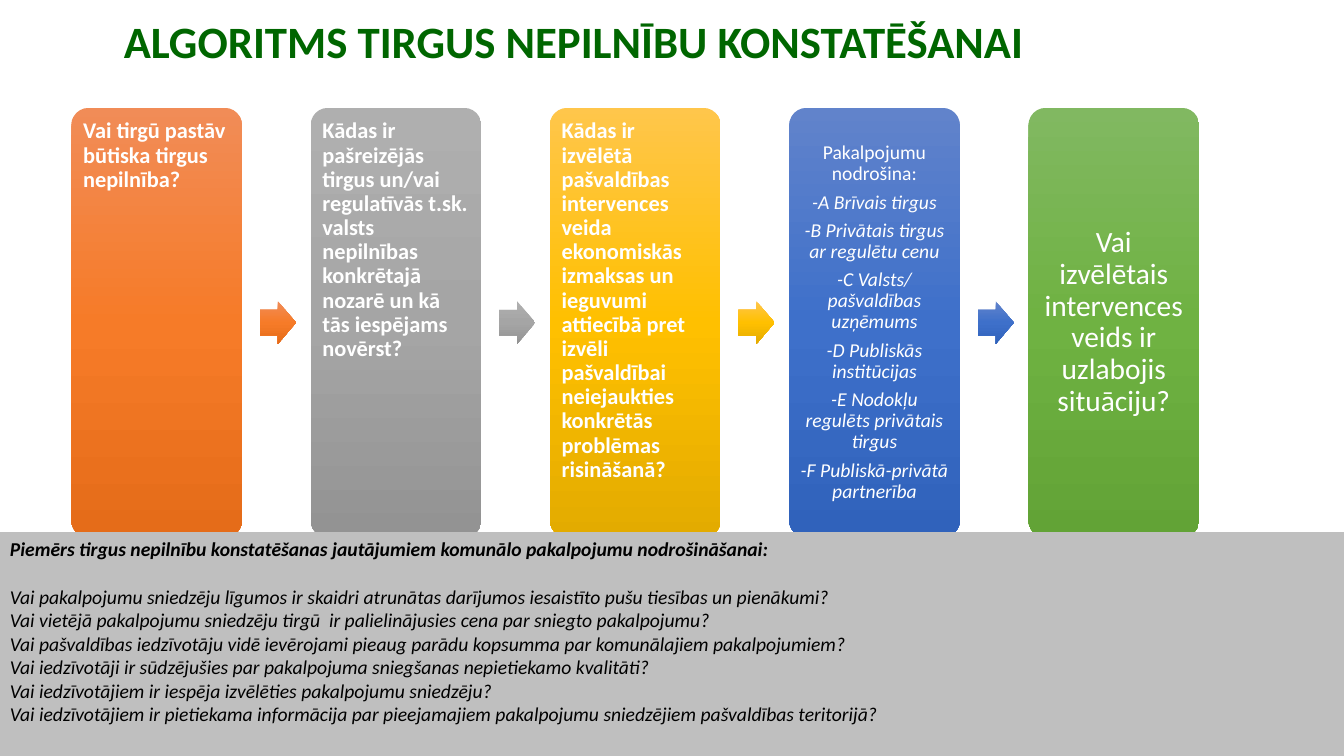
from copy import deepcopy
from dataclasses import dataclass

from pptx import Presentation
from pptx.dml.color import RGBColor as Rgb
from pptx.enum.shapes import MSO_SHAPE as Kind
from pptx.enum.text import MSO_ANCHOR as Anchor, PP_ALIGN as Align
from pptx.oxml.ns import qn
from pptx.shapes.autoshape import Shape
from pptx.shapes.shapetree import SlideShapes
from pptx.text.text import TextFrame
from pptx.util import Cm, Pt


@dataclass(frozen=True)
class Theme:
    font: str = "Calibri"
    title: str = "006600"
    white: str = "FFFFFF"
    black: str = "000000"
    panel: str = "BFBFBF"
    orange: tuple[str, ...] = ("F18C57", "F67B28", "E56C19")
    gray: tuple[str, ...] = ("AFAFAF", "A5A5A5", "939393")
    gold: tuple[str, ...] = ("FFC64B", "FFC000", "E3AB00")
    blue: tuple[str, ...] = ("6183CB", "3E70CA", "3062BB")
    green: tuple[str, ...] = ("81B861", "6FB242", "62A336")
    head: int = 32
    final: int = 21
    ask: int = 16
    small: int = 14


@dataclass(frozen=True)
class Step:
    lines: tuple[str, ...]
    shades: tuple[str, ...]
    size: int
    inset: float
    bold: bool = False
    center: bool = False


THEME = Theme()
WIDTH, HEIGHT = 33.87, 19.05
LEFT, TOP, PITCH = 1.8, 2.72, 6.03
CARD_W, CARD_H = 4.3, 10.82
ARROW_W, ARROW_H, ARROW_DX = 0.91, 1.07, 4.75
PANEL_TOP = 13.41

STEPS = (
    Step(("Vai tirgū pastāv būtiska tirgus nepilnība?",),
         THEME.orange, THEME.ask, 0.17, bold=True),
    Step(("Kādas ir pašreizējās tirgus un/vai regulatīvās t.sk. valsts "
          "nepilnības konkrētajā nozarē un kā tās iespējams novērst?",),
         THEME.gray, THEME.ask, 0.17, bold=True),
    Step(("Kādas ir izvēlētā pašvaldības intervences veida ekonomiskās "
          "izmaksas un ieguvumi attiecībā pret izvēli pašvaldībai "
          "neiejaukties konkrētās problēmas risināšanā?",),
         THEME.gold, THEME.ask, 0.17, bold=True),
    Step(("Pakalpojumu nodrošina:",
          "-A Brīvais tirgus",
          "-B Privātais tirgus ar regulētu cenu",
          "-C Valsts/ pašvaldības uzņēmums",
          "-D Publiskās institūcijas",
          "-E Nodokļu regulēts privātais tirgus",
          "-F Publiskā-privātā partnerība"),
         THEME.blue, THEME.small, 0.15, center=True),
    Step(("Vai izvēlētais intervences veids ir uzlabojis situāciju?",),
         THEME.green, THEME.final, 0.23, center=True),
)

PANEL = (
    "Piemērs tirgus nepilnību konstatēšanas jautājumiem komunālo pakalpojumu nodrošināšanai:",
    "Vai pakalpojumu sniedzēju līgumos ir skaidri atrunātas darījumos iesaistīto pušu tiesības un pienākumi?",
    "Vai vietējā pakalpojumu sniedzēju tirgū  ir palielinājusies cena par sniegto pakalpojumu?",
    "Vai pašvaldības iedzīvotāju vidē ievērojami pieaug parādu kopsumma par komunālajiem pakalpojumiem?",
    "Vai iedzīvotāji ir sūdzējušies par pakalpojuma sniegšanas nepietiekamo kvalitāti?",
    "Vai iedzīvotājiem ir iespēja izvēlēties pakalpojumu sniedzēju?",
    "Vai iedzīvotājiem ir pietiekama informācija par pieejamajiem pakalpojumu sniedzējiem pašvaldības teritorijā?",
)


def write(frame: TextFrame, lines: tuple[str, ...], size: int, color: str,
          bold: bool = False, align: Align = Align.LEFT,
          anchor: Anchor = Anchor.TOP) -> None:
    frame.word_wrap = True
    frame.vertical_anchor = anchor
    frame.text = "\n".join(lines)
    for par in frame.paragraphs:
        par.alignment = align
        font = par.font
        font.name, font.size, font.bold = THEME.font, Pt(size), bold
        font.color.rgb = Rgb.from_string(color)


def add_plain(shapes: SlideShapes, kind: Kind, left: float, top: float,
              width: float, height: float) -> Shape:
    """Add a shape that has neither line nor shadow."""
    shape = shapes.add_shape(kind, Cm(left), Cm(top), Cm(width), Cm(height))
    shape.shadow.inherit = False
    shape.line.fill.background()
    return shape


def shade(shape: Shape, colors: tuple[str, ...]) -> None:
    """Fill from top to bottom with three evenly spaced colours."""
    fill = shape.fill
    fill.gradient()
    fill.gradient_angle = 270
    stops = shape._element.spPr.find(qn("a:gradFill")).find(qn("a:gsLst"))
    stops.append(deepcopy(stops[0]))
    for num, (stop, color) in enumerate(zip(fill.gradient_stops, colors)):
        stop.position = num / 2
        stop.color.rgb = Rgb.from_string(color)


def add_card(shapes: SlideShapes, step: Step, left: float) -> None:
    card = add_plain(shapes, Kind.ROUNDED_RECTANGLE, left, TOP, CARD_W, CARD_H)
    card.adjustments[0] = 0.1
    shade(card, step.shades)
    frame = card.text_frame
    frame.margin_left = frame.margin_right = Cm(step.inset)
    frame.margin_top = frame.margin_bottom = Cm(step.inset)
    write(frame, step.lines, step.size, THEME.white, step.bold,
          Align.CENTER if step.center else Align.LEFT,
          Anchor.MIDDLE if step.center else Anchor.TOP)
    for num, par in enumerate(frame.paragraphs):
        par.line_spacing = 0.9
        par.space_after = Pt(round(step.size * 0.35))
        par.font.italic = num > 0


def add_arrow(shapes: SlideShapes, step: Step, left: float) -> None:
    top = TOP + (CARD_H - ARROW_H) / 2
    arrow = add_plain(shapes, Kind.RIGHT_ARROW, left, top, ARROW_W, ARROW_H)
    arrow.adjustments[0], arrow.adjustments[1] = 0.6, 0.5
    shade(arrow, step.shades)


def add_title(shapes: SlideShapes) -> None:
    box = shapes.add_textbox(Cm(2.87), Cm(-0.74), Cm(29.21), Cm(3.68))
    write(box.text_frame, ("ALGORITMS TIRGUS NEPILNĪBU KONSTATĒŠANAI",),
          THEME.head, THEME.title, bold=True, anchor=Anchor.MIDDLE)
    box.text_frame.paragraphs[0].line_spacing = 0.9


def add_panel(shapes: SlideShapes) -> None:
    panel = add_plain(shapes, Kind.RECTANGLE, 0, PANEL_TOP, WIDTH,
                      HEIGHT - PANEL_TOP)
    panel.fill.solid()
    panel.fill.fore_color.rgb = Rgb.from_string(THEME.panel)
    write(panel.text_frame, PANEL, THEME.small, THEME.black)
    for par in panel.text_frame.paragraphs:
        par.font.italic = True
    head = panel.text_frame.paragraphs[0]
    head.font.bold = True
    head.space_after = Pt(17)


def main() -> None:
    deck = Presentation()
    deck.slide_width, deck.slide_height = Cm(WIDTH), Cm(HEIGHT)
    shapes = deck.slides.add_slide(deck.slide_layouts[6]).shapes
    add_title(shapes)
    for num, step in enumerate(STEPS):
        left = LEFT + num * PITCH
        add_card(shapes, step, left)
        if step is not STEPS[-1]:
            add_arrow(shapes, step, left + ARROW_DX)
    add_panel(shapes)
    deck.save("out.pptx")


if __name__ == "__main__":
    main()
